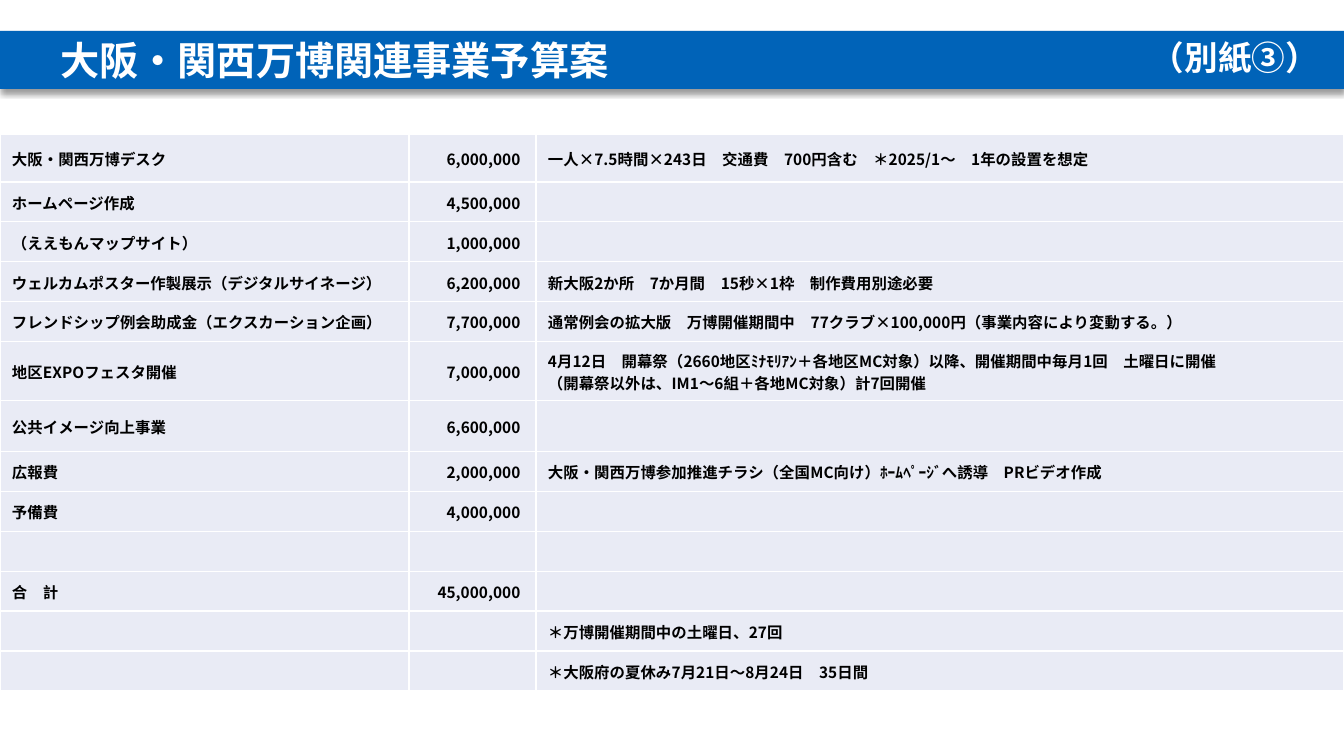
"""Build the budget slide for the expo projects."""
from lxml import etree
from pptx import Presentation
from pptx import util as u
from pptx.dml.color import RGBColor
from pptx.enum import shapes, text
from pptx.oxml import ns

HUES = {"bar": "0063B8", "cell": "E9EBF5", "ink": "000000", "white": "FFFFFF"}
FONT = "Noto Sans CJK JP"
WIDE, HIGH = 1344, 756
SCALE = 12192000 / WIDE
COLS = [409, 127, 808]
TALL = {0: 48, 5: 59, 6: 51}
SPAN = 557
ROWS = [
    ("大阪・関西万博デスク", "6,000,000 ", "一人×7.5時間×243日　交通費　700円含む　＊2025/1～　1年の設置を想定"),
    ("ホームページ作成", "4,500,000 ", ""),
    ("（ええもんマップサイト）", "1,000,000 ", ""),
    ("ウェルカムポスター作製展示（デジタルサイネージ）", "6,200,000 ", "新大阪2か所　7か月間　15秒×1枠　制作費用別途必要"),
    ("フレンドシップ例会助成金（エクスカーション企画）", "7,700,000 ",
     "通常例会の拡大版　万博開催期間中　77クラブ×100,000円（事業内容により変動する。）"),
    ("地区EXPOフェスタ開催", "7,000,000 ",
     "4月12日　開幕祭（2660地区ﾐﾅﾓﾘｱﾝ＋各地区MC対象）以降、開催期間中毎月1回　土曜日に開催\n"
     "（開幕祭以外は、IM1～6組＋各地MC対象）計7回開催"),
    ("公共イメージ向上事業", "6,600,000 ", ""),
    ("広報費", "2,000,000 ", "大阪・関西万博参加推進チラシ（全国MC向け）ﾎｰﾑﾍﾟｰｼﾞへ誘導　PRビデオ作成"),
    ("予備費", "4,000,000 ", ""),
    ("", "", ""),
    ("合　計", "45,000,000 ", ""),
    ("", "", "＊万博開催期間中の土曜日、27回"),
    ("", "", "＊大阪府の夏休み7月21日～8月24日　35日間"),
]


def px(num):
    return u.Emu(round(num * SCALE))


def tint(fill, hue):
    fill.solid()
    fill.fore_color.rgb = RGBColor.from_string(HUES[hue])


def node(top, tag, **attrs):
    return etree.SubElement(top, ns.qn(tag), attrs)


def write(frame, words, size, hue, align=text.PP_ALIGN.LEFT, level=0):
    for i, line in enumerate(words.split("\n")):
        para = frame.add_paragraph() if i else frame.paragraphs[0]
        para.alignment, para.level = align, level
        run = para.add_run()
        run.text = line
        run.font.size, run.font.bold, run.font.name = u.Pt(size), True, FONT
        tint(run.font.fill, hue)
        node(run.font._element, "a:ea", typeface=FONT)


class Deck:
    def __init__(self):
        self.show = Presentation()
        self.show.slide_width, self.show.slide_height = px(WIDE), px(HIGH)
        self.slide = self.show.slides.add_slide(self.show.slide_layouts[6])

    def banner(self, words, x, y, w, h):
        bar = self.slide.shapes.add_shape(
            shapes.MSO_SHAPE.RECTANGLE, *map(px, (x, y, w, h)))
        bar.shadow.inherit = False
        tint(bar.fill, "bar")
        bar.line.fill.background()
        glow = node(bar._element.spPr.find(ns.qn("a:effectLst")), "a:outerShdw",
                    blurRad=str(u.Pt(4)), dist=str(u.Pt(3)), dir="5400000", rotWithShape="0")
        node(node(glow, "a:srgbClr", val=HUES["ink"]), "a:alpha", val="40000")
        bar.text_frame.vertical_anchor = text.MSO_ANCHOR.MIDDLE
        write(bar.text_frame, words, 28, "white", level=1)

    def label(self, words, x, y, w, h):
        box = self.slide.shapes.add_textbox(*map(px, (x, y, w, h)))
        box.text_frame.word_wrap = False
        write(box.text_frame, words, 24, "white")

    def edge(self, cell):
        props = cell._tc.get_or_add_tcPr()
        for i, side in enumerate("LRTB"):
            line = node(props, "a:ln" + side, w=str(u.Pt(1)))
            node(node(line, "a:solidFill"), "a:srgbClr", val=HUES["white"])
            props.insert(i, line)

    def table(self, x, y):
        grid = self.slide.shapes.add_table(
            len(ROWS), len(COLS), px(x), px(y), px(sum(COLS)), px(SPAN)).table
        grid.first_row = grid.horz_banding = False
        for col, wide in zip(grid.columns, COLS):
            col.width = px(wide)
        rest = (SPAN - sum(TALL.values())) / (len(ROWS) - len(TALL))
        for i, row in enumerate(ROWS):
            grid.rows[i].height = px(TALL.get(i, rest))
            for j, words in enumerate(row):
                cell = grid.cell(i, j)
                cell.vertical_anchor = text.MSO_ANCHOR.MIDDLE
                cell.margin_left = cell.margin_right = px(12)
                cell.margin_top, cell.margin_bottom = px(1), 0
                tint(cell.fill, "cell")
                self.edge(cell)
                if words:
                    align = text.PP_ALIGN.RIGHT if j == 1 else text.PP_ALIGN.LEFT
                    write(cell.text_frame, words, 11, "ink", align)


def main():
    deck = Deck()
    deck.table(0, 134)
    deck.banner("大阪・関西万博関連事業予算案", 0, 31, WIDE, 58)
    deck.label("（別紙③）", 1141, 32, 190, 50)
    deck.show.save("out.pptx")


if __name__ == "__main__":
    main()
